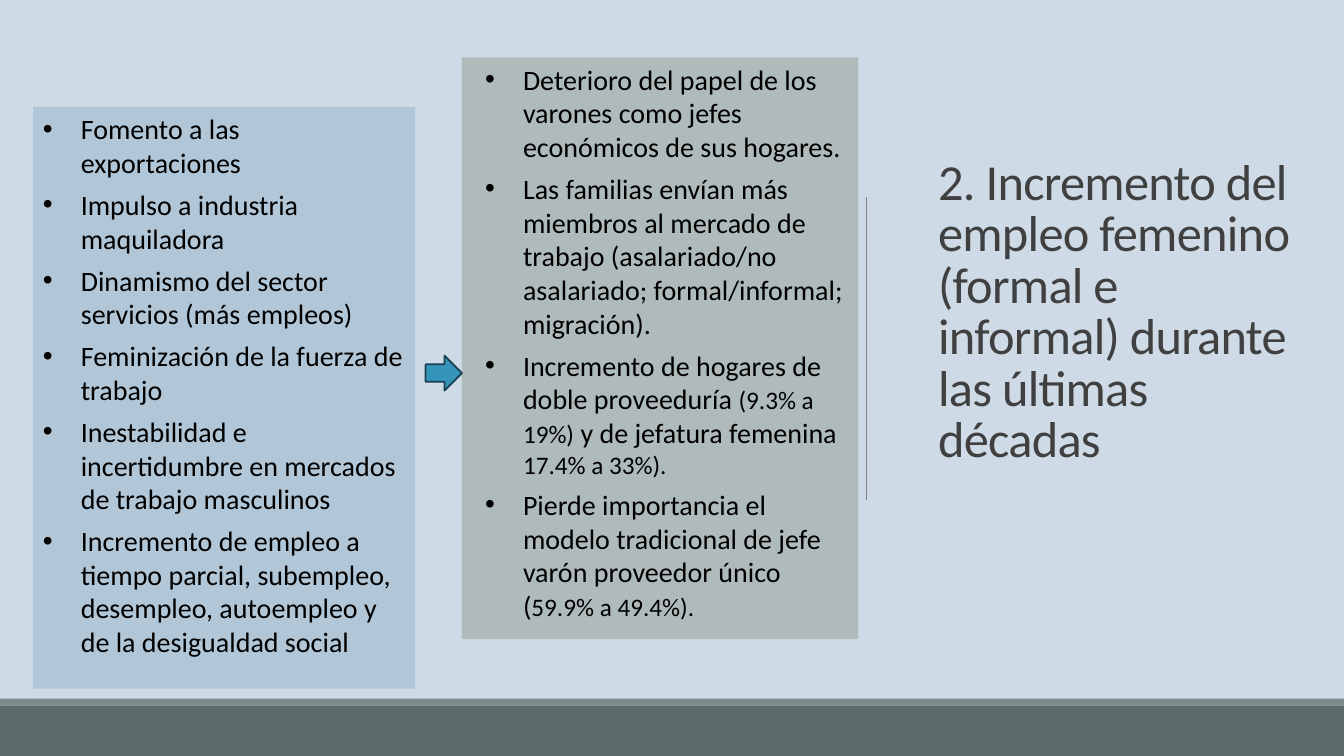
"""Build the slide on the growth of female employment in recent decades."""
from lxml import etree
from pptx import Presentation
from pptx.dml.color import RGBColor
from pptx.enum.shapes import MSO_CONNECTOR, MSO_SHAPE
from pptx.enum.text import MSO_ANCHOR, PP_ALIGN
from pptx.oxml.ns import qn
from pptx.util import Pt

SKY = RGBColor(0xCE, 0xDB, 0xE6)
STRIPE = RGBColor(0x7A, 0x8C, 0x8E)
FOOTER = RGBColor(0x5B, 0x69, 0x6B)
CAUSES = RGBColor(0xB1, 0xC6, 0xD7)
EFFECTS = RGBColor(0xAF, 0xBA, 0xBB)
ARROW = RGBColor(0x34, 0x94, 0xBA)
ARROW_EDGE = RGBColor(0x17, 0x41, 0x52)
RULE = RGBColor(0x80, 0x80, 0x80)
HEADING = RGBColor(0x40, 0x40, 0x40)
BLACK = RGBColor(0, 0, 0)

causes = [
    [("Fomento a las exportaciones", 20)],
    [("Impulso a industria maquiladora", 20)],
    [("Dinamismo del sector servicios (más empleos)", 20)],
    [("Feminización de la fuerza de trabajo", 20)],
    [("Inestabilidad e incertidumbre en mercados de trabajo masculinos", 20)],
    [("Incremento de empleo a tiempo parcial, subempleo, desempleo, "
      "autoempleo y de la desigualdad social", 20)],
]
effects = [
    [("Deterioro del papel de los varones como jefes económicos de sus hogares.", 20)],
    [("Las familias envían más miembros al mercado de trabajo "
      "(asalariado/no asalariado; formal/informal; migración).", 20)],
    [("Incremento de hogares de doble proveeduría ", 20), ("(9.3% a 19%)", 18),
     (" y de jefatura femenina ", 20), ("17.4% a 33%).", 18)],
    [("Pierde importancia el modelo tradicional de jefe varón proveedor único (", 20),
     ("59.9% a 49.4%).", 18)],
]

deck = Presentation()
deck.slide_width, deck.slide_height = Pt(960), Pt(540)
page = deck.slides.add_slide(deck.slide_layouts[6])
page.background.fill.solid()
page.background.fill.fore_color.rgb = SKY


def add_block(kind, left, top, width, height, color):
    block = page.shapes.add_shape(kind, Pt(left), Pt(top), Pt(width), Pt(height))
    block.shadow.inherit = False
    block.fill.solid()
    block.fill.fore_color.rgb = color
    block.line.fill.background()
    return block


def add_bullets(box, items, indent):
    frame = box.text_frame
    frame.word_wrap = True
    frame.vertical_anchor = MSO_ANCHOR.TOP
    for index, item in enumerate(items):
        para = frame.paragraphs[0] if index == 0 else frame.add_paragraph()
        para.alignment = PP_ALIGN.LEFT
        para.space_after = Pt(6)
        para.font.name = "Calibri"
        para.font.color.rgb = BLACK
        for words, size in item:
            span = para.add_run()
            span.text = words
            span.font.size = Pt(size)
        properties = para._p.get_or_add_pPr()
        properties.set("marL", str(Pt(indent)))
        properties.set("indent", str(Pt(-27)))
        font = etree.Element(qn("a:buFont"), typeface="Arial")
        bullet = etree.Element(qn("a:buChar"), char="•")
        properties.find(qn("a:spcAft")).addnext(font)
        font.addnext(bullet)


add_block(MSO_SHAPE.RECTANGLE, 0, 499, 960, 5, STRIPE)
add_block(MSO_SHAPE.RECTANGLE, 0, 504, 960, 36, FOOTER)

title = page.shapes.add_textbox(Pt(663), Pt(25), Pt(266), Pt(398))
title.text_frame.word_wrap = True
title.text_frame.vertical_anchor = MSO_ANCHOR.MIDDLE
para = title.text_frame.paragraphs[0]
para.line_spacing = 0.85
para.font.name = "Calibri"
para.font.size = Pt(36)
para.font.color.rgb = HEADING
span = para.add_run()
span.text = ("2. Incremento del empleo femenino (formal e informal) "
             "durante las últimas décadas")
span._r.get_or_add_rPr().set("spc", "-50")

divider = page.shapes.add_connector(
    MSO_CONNECTOR.STRAIGHT, Pt(618.7), Pt(141), Pt(618.7), Pt(357))
divider.line.color.rgb = RULE
divider.line.width = Pt(0.5)
etree.SubElement(divider._element.spPr, qn("a:effectLst"))

causes_box = add_block(MSO_SHAPE.RECTANGLE, 23.6, 76.4, 273, 415.5, CAUSES)
add_bullets(causes_box, causes, 27)
effects_box = add_block(MSO_SHAPE.RECTANGLE, 330, 41, 283, 415.5, EFFECTS)
add_bullets(effects_box, effects, 36.5)

arrow = add_block(MSO_SHAPE.RIGHT_ARROW, 304, 254, 26, 25, ARROW)
arrow.line.color.rgb = ARROW_EDGE
arrow.line.width = Pt(1.25)

deck.save("out.pptx")
